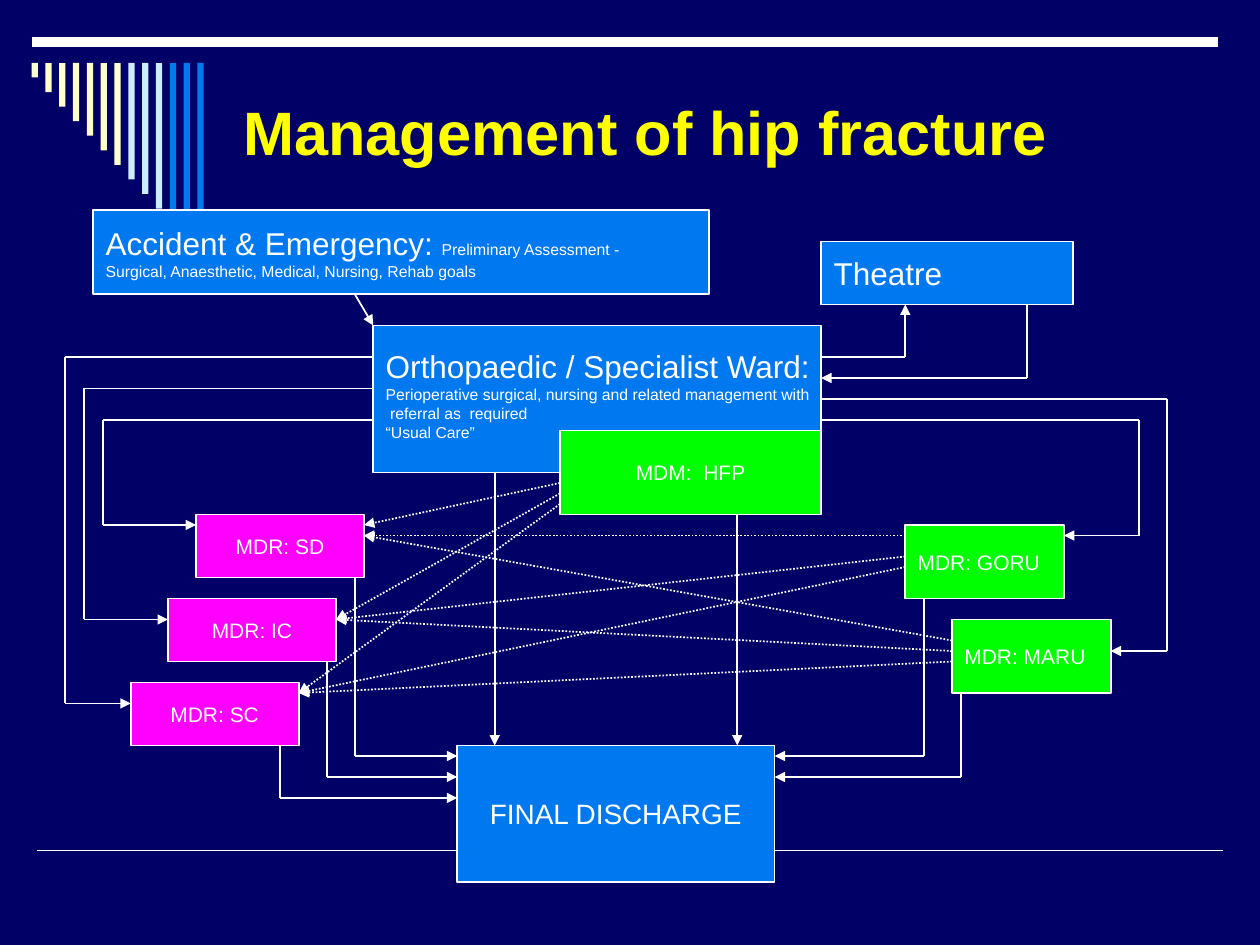
from itertools import pairwise
from pptx import Presentation
from pptx import util as u
from pptx.dml.color import RGBColor
from pptx.enum import dml, shapes, text
from pptx.oxml import parse_xml
from pptx.oxml.ns import nsdecls

THEME = dict(
    font="Arial", back="000066", ink="FFFFFF", title="FFFF00",
    blue="0078F0", green="00FF00", pink="FF00FF", cream="FFFFCC", pale="CCECFF",
    huge=35, head=18, done=16, node=12, note=9, rule=1, band=6,
)
LEFT, MID = text.PP_ALIGN.LEFT, text.PP_ALIGN.CENTER
TITLE = "Management of hip fracture"

# name: (left, top, width, height), fill, alignment, paragraphs of (words, size)
BOXES = {
    "emergency": ((53.3, 120, 352, 48), "blue", LEFT, [
        [("Accident & Emergency: ", "head"), ("Preliminary Assessment -", "note")],
        [("Surgical, Anaesthetic, Medical, Nursing, Rehab goals", "note")]]),
    "ward": ((213.3, 186, 256, 84), "blue", LEFT, [
        [("Orthopaedic / Specialist Ward:", "head")],
        [("Perioperative surgical, nursing and related management with", "note")],
        [(" referral as  required", "note")],
        [("“Usual Care”", "note")]]),
    "theatre": ((469.3, 138, 144, 36), "blue", LEFT, [[("Theatre", "head")]]),
    "goru": ((517.3, 300, 90.7, 42), "green", LEFT, [[("MDR: GORU", "node")]]),
    "maru": ((544, 354, 90.7, 42), "green", LEFT, [[("MDR: MARU", "node")]]),
    "mdm": ((320, 246, 149.3, 48), "green", MID, [[("MDM:  HFP", "node")]]),
    "sd": ((112, 294, 96, 36), "pink", MID, [[("MDR: SD", "node")]]),
    "ic": ((96, 342, 96, 36), "pink", MID, [[("MDR: IC", "node")]]),
    "sc": ((74.7, 390, 96, 36), "pink", MID, [[("MDR: SC", "node")]]),
    "final": ((261.3, 426, 181.3, 78), "blue", MID, [[("FINAL DISCHARGE", "done")]]),
}
ROUTES = [
    [(202.7, 168), (213.3, 186)],
    [(469.3, 204), (517.3, 204), (517.3, 174)],
    [(586.7, 174), (586.7, 216), (469.3, 216)],
    [(469.3, 228), (666.7, 228), (666.7, 372), (634.7, 372)],
    [(469.3, 240), (650.7, 240), (650.7, 306), (608, 306)],
    [(213.3, 240), (58.7, 240), (58.7, 300), (112, 300)],
    [(213.3, 222), (48, 222), (48, 354), (96, 354)],
    [(213.3, 204), (37.3, 204), (37.3, 402), (74.7, 402)],
    [(202.7, 330), (202.7, 432), (261.3, 432)],
    [(186.7, 378), (186.7, 444), (261.3, 444)],
    [(160, 426), (160, 456), (261.3, 456)],
    [(528, 342), (528, 432), (442.7, 432)],
    [(549.3, 396), (549.3, 444), (442.7, 444)],
    [(421.3, 294), (421.3, 426)],
    [(282.7, 270), (282.7, 426)],
]
# start x, start heights, height of the arrow at the first target
FANS = [
    (320, (276, 282, 288), 300),
    (517.3, (306, 318, 324), 306),
    (544, (366, 372, 378), 306),
]
BARS = ["cream"] * 7 + ["pale"] * 3 + ["blue"] * 3


def tint(key):
    """Return a theme colour."""
    return RGBColor.from_string(THEME[key])


def put(obj, **vals):
    """Set each named attribute on an object."""
    for key, val in vals.items():
        setattr(obj, key, val)


def rect(page, area, fill, edge=True):
    """Draw a filled rectangle, outlined or plain."""
    box = page.shapes.add_shape(shapes.MSO_SHAPE.RECTANGLE, *map(u.Pt, area))
    box.shadow.inherit = False
    box.fill.solid()
    box.fill.fore_color.rgb = tint(fill)
    if edge:
        box.line.color.rgb = tint("ink")
        box.line.width = u.Pt(THEME["rule"])
    else:
        box.line.fill.background()
    return box


def write(frame, paras, align, color="ink", bold=False):
    """Fill a text frame with paragraphs of sized runs."""
    for i, runs in enumerate(paras):
        para = frame.add_paragraph() if i else frame.paragraphs[0]
        para.alignment = align
        for words, size in runs:
            run = para.add_run()
            run.text = words
            put(run.font, name=THEME["font"], size=u.Pt(THEME[size]), bold=bold)
            run.font.color.rgb = tint(color)


def line(page, start, end, width="rule", tip=False, dots=False):
    """Draw a straight connector, perhaps dotted or with an arrowhead."""
    link = page.shapes.add_connector(
        shapes.MSO_CONNECTOR.STRAIGHT, *map(u.Pt, start + end))
    link.line.color.rgb = tint("ink")
    link.line.width = u.Pt(THEME[width])
    if dots:
        link.line.dash_style = dml.MSO_LINE.ROUND_DOT
    if tip:
        link.line._get_or_add_ln().append(
            parse_xml(f'<a:tailEnd {nsdecls("a")} type="triangle"/>'))
    link._element.spPr.append(parse_xml(f'<a:effectLst {nsdecls("a")}/>'))
    return link


def main():
    """Build the hip fracture pathway slide."""
    deck = Presentation()
    put(deck, slide_width=u.Pt(720), slide_height=u.Pt(540))
    page = deck.slides.add_slide(deck.slide_layouts[6])
    page.background.fill.solid()
    page.background.fill.fore_color.rgb = tint("back")

    line(page, (21, 486), (699, 486))
    line(page, (18, 24), (696, 24), "band")
    for i, fill in enumerate(BARS):
        rect(page, (18 + 7.9 * i, 36, 3.6, 8.32 * (i + 1)), fill, False)

    head = page.shapes.add_textbox(*map(u.Pt, (132, 30, 544, 90))).text_frame
    put(head, word_wrap=True, vertical_anchor=text.MSO_ANCHOR.MIDDLE)
    write(head, [[(TITLE, "huge")]], LEFT, "title", True)

    made = {}
    for name, (area, fill, align, paras) in BOXES.items():
        made[name] = rect(page, area, fill)
        frame = made[name].text_frame
        put(frame, word_wrap=False, vertical_anchor=text.MSO_ANCHOR.MIDDLE)
        write(frame, paras, align)
    put(made["ward"].text_frame, vertical_anchor=text.MSO_ANCHOR.TOP,
        margin_top=u.Pt(12.2))

    x, y, w, h = BOXES["ward"][0]
    for route in ROUTES:
        for start, end in pairwise(route):
            link = line(page, start, end, tip=end == route[-1])
            if start == (x + w, y + h / 2):
                link.begin_connect(made["ward"], 3)

    for x, rows, first in FANS:
        ends = [(208, first), (192, 354), (170.7, 396)]
        for y, end in zip(rows, ends):
            line(page, (x, y), end, tip=True, dots=True)

    deck.save("out.pptx")


if __name__ == "__main__":
    main()
